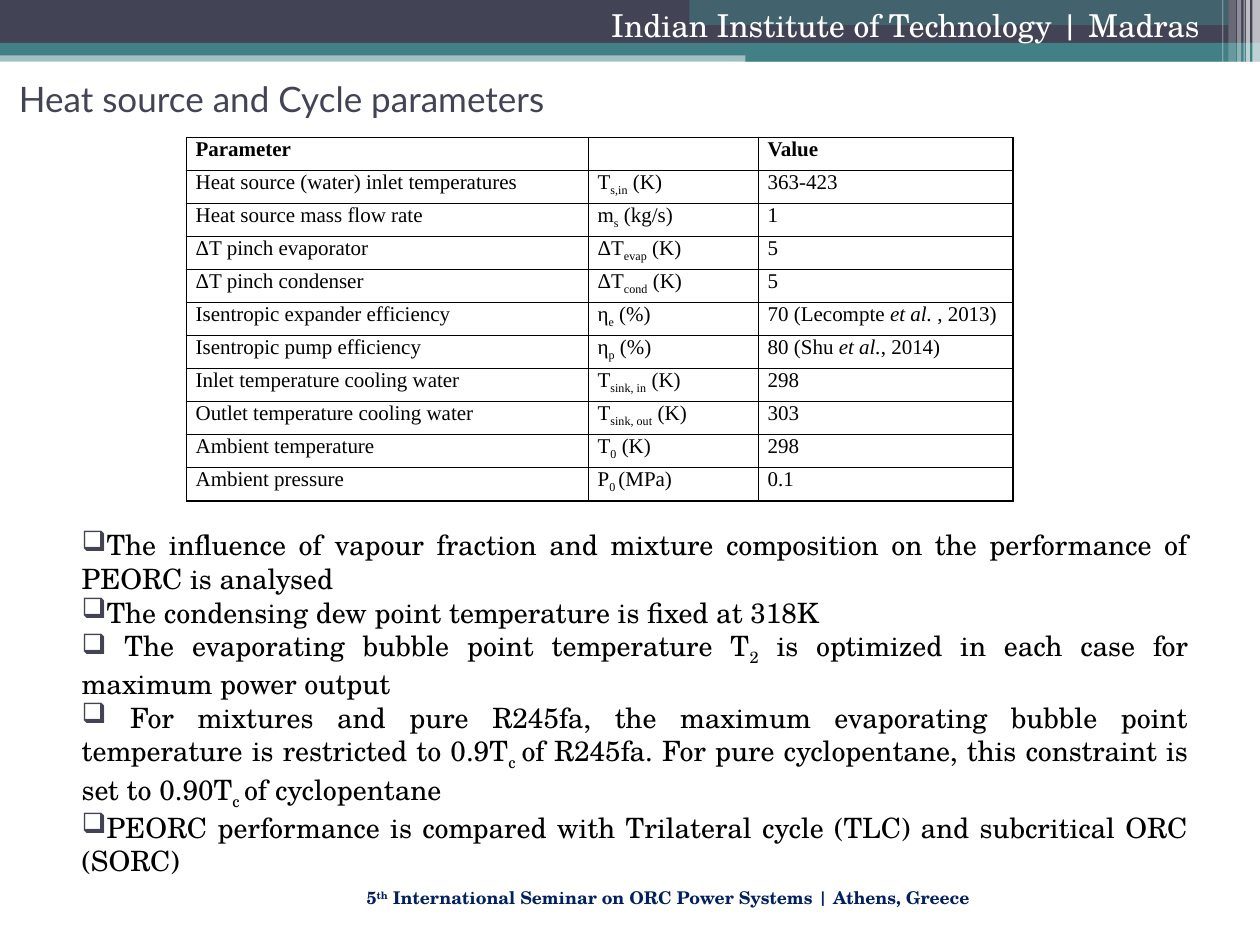
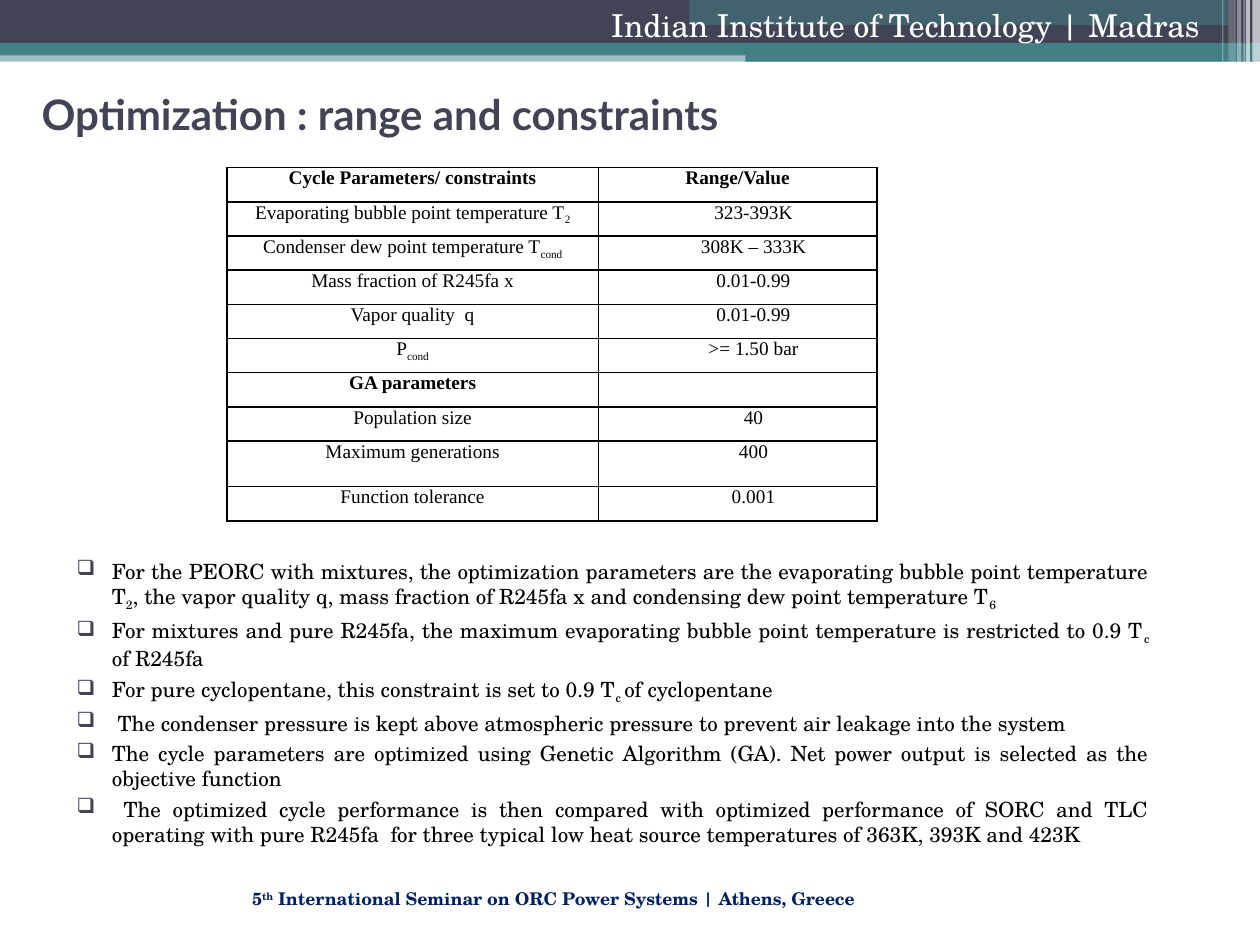
from collections import namedtuple

from lxml import etree
from pptx import Presentation
from pptx.dml.color import RGBColor
from pptx.enum import shapes, text
from pptx.oxml.ns import qn
from pptx.util import Pt

Theme = namedtuple("Theme", "dark teal white navy black serif sans table_font "
                            "header_size footer_size line_width")
theme = Theme(dark="424456", teal="438086", white="FFFFFF", navy="002060", black="000000",
              serif="TeX Gyre Schola", sans="Lato", table_font="Times New Roman",
              header_size=18, footer_size=10, line_width=1)
align = text.PP_ALIGN
anchor = text.MSO_ANCHOR

# Shared bands: left, top, width, height, colour, opacity in percent
bands = [
    (0, 28.8, 720, 6.5, theme.teal, 50),
    (0, 0, 720, 24.5, theme.dark, 100),
    (0, 24.5, 720, 7.2, theme.teal, 100),
    (426, 28.1, 294, 7.2, theme.teal, 100),
    (394, 0, 308, 14.4, theme.teal, 50),
    (715.7, 0, 4.3, 49, theme.white, 65),
    (712, 0, 2.2, 49, theme.white, 65),
    (710.6, 0, 0.7, 49, theme.white, 60),
    (707, 0, 2.2, 49, theme.white, 40),
    (702, 0, 4.3, 46, theme.white, 20),
    (698.4, 0, 0.7, 46, theme.white, 30),
]

# Text marks: ~-subscript~  ~+superscript~  ~/italic~  ~*bold~
header = "Indian Institute of Technology | Madras"
footer = "5~+th~ International Seminar on ORC Power Systems | Athens, Greece"

slides = [
    dict(
        title="Heat source and Cycle parameters", title_size=20, title_bold=False,
        title_place=(3.6, 28.8, 621.4, 55.4), footer_place=(127.4, 503.3, 433.4, 36),
        table_place=(106.6, 78.5), columns=(229.7, 97.2, 145.4),
        heights=[18.9] * 11, table_size=12, cell_margin=5.2,
        cell_align=align.JUSTIFY, value_indent=0,
        rows=[
            ("~*Parameter~", "", "~*Value~"),
            ("Heat source (water) inlet temperatures", "T~-s,in~ (K)", "363-423"),
            ("Heat source mass flow rate", "m~-s~ (kg/s)", "1"),
            ("ΔT pinch evaporator", "ΔT~-evap~ (K)", "5"),
            ("ΔT pinch condenser", "ΔT~-cond~ (K)", "5"),
            ("Isentropic expander efficiency", "η~-e~ (%)", "70 (Lecompte ~/et al.~ , 2013)"),
            ("Isentropic pump efficiency", "η~-p~ (%)", "80 (Shu ~/et al.~, 2014)"),
            ("Inlet temperature cooling water", "T~-sink, in~ (K)", "298"),
            ("Outlet temperature cooling water", "T~-sink, out~ (K)", "303"),
            ("Ambient temperature", "T~-0~ (K)", "298"),
            ("Ambient pressure", "P~-0 ~(MPa)", "0.1"),
        ],
        notes_place=(39.6, 298.1, 646.6, 200.9), notes_size=16,
        note_left=0, note_hang=0, note_gap=0,
        points=[
            "The influence of vapour fraction and mixture composition on the performance of "
            "PEORC is analysed",
            "The condensing dew point temperature is fixed at 318K",
            " The evaporating bubble point temperature T~-2~ is optimized in each case for "
            "maximum power output",
            " For mixtures and pure R245fa, the maximum evaporating bubble point temperature "
            "is restricted to 0.9T~-c ~of R245fa. For pure cyclopentane, this constraint is "
            "set to 0.90T~-c ~of cyclopentane",
            "PEORC performance is compared with Trilateral cycle (TLC) and subcritical ORC (SORC)",
        ],
    ),
    dict(
        title="Optimization : range and constraints", title_size=24, title_bold=True,
        title_place=(16.6, 39.6, 608.4, 50.4), footer_place=(61.9, 504, 433.4, 36),
        table_place=(129.6, 95.8), columns=(212.4, 159.1),
        heights=[19.55] * 8 + [26, 19.55], table_size=11, cell_margin=3.6,
        cell_align=align.CENTER, value_indent=18,
        rows=[
            ("~*Cycle Parameters/ constraints~", "~*Range/Value~"),
            ("Evaporating bubble point temperature T~-2~", "323-393K"),
            ("Condenser dew point temperature T~-cond~", "308K – 333K"),
            ("Mass fraction of R245fa x", "0.01-0.99"),
            ("Vapor quality  q", "0.01-0.99"),
            ("P~-cond~", ">= 1.50 bar"),
            ("~*GA parameters~", ""),
            ("Population size", "40"),
            ("Maximum generations", "400"),
            ("Function tolerance", "0.001"),
        ],
        notes_place=(28.1, 315.4, 635.8, 185.8), notes_size=12,
        note_left=28.8, note_hang=-20.2, note_gap=3,
        points=[
            "For the PEORC with mixtures, the optimization parameters are the evaporating "
            "bubble point temperature T~-2~, the vapor quality q, mass fraction of R245fa x "
            "and condensing dew point temperature T~-6~",
            "For mixtures and pure R245fa, the maximum evaporating bubble point temperature "
            "is restricted to 0.9 T~-c ~of R245fa",
            "For pure cyclopentane, this constraint is set to 0.9 T~-c ~of cyclopentane",
            " The condenser pressure is kept above atmospheric pressure to prevent air "
            "leakage into the system",
            "The cycle parameters are optimized using Genetic Algorithm (GA). Net power "
            "output is selected as the objective function",
            " The optimized cycle performance is then compared with optimized performance of "
            "SORC and TLC operating with pure R245fa  for three typical low heat source "
            "temperatures of 363K, 393K and 423K",
        ],
    ),
]


def write(paragraph, marked, font, size, color, alignment, bold=False):
    """Fill a paragraph from marked text."""
    paragraph.alignment = alignment
    for index, piece in enumerate(marked.split("~")):
        if not piece:
            continue
        mark, words = (piece[0], piece[1:]) if index % 2 else ("", piece)
        span = paragraph.add_run()
        span.text = words
        span.font.name = font
        span.font.size = Pt(size)
        span.font.color.rgb = RGBColor.from_string(color)
        span.font.bold = bold or mark == "*"
        span.font.italic = mark == "/"
        if mark in ("-", "+"):
            span.font._rPr.set("baseline", "-25000" if mark == "-" else "30000")
    if not marked:
        etree.SubElement(paragraph._p, qn("a:endParaRPr"), sz=str(size * 100))


def add_box(page, place, vertical=anchor.TOP):
    """Add a wrapping text box and return its text frame."""
    frame = page.shapes.add_textbox(*map(Pt, place)).text_frame
    frame.word_wrap = True
    frame.vertical_anchor = vertical
    return frame


deck = Presentation()
deck.slide_width, deck.slide_height = Pt(720), Pt(540)

for content in slides:
    page = deck.slides.add_slide(deck.slide_layouts[5])

    # Bands and stripes
    for *place, color, opacity in bands:
        band = page.shapes.add_shape(shapes.MSO_SHAPE.RECTANGLE, *map(Pt, place))
        band.shadow.inherit = False
        band.line.fill.background()
        band.fill.solid()
        band.fill.fore_color.rgb = RGBColor.from_string(color)
        if opacity < 100:
            tint = band._element.spPr.find(".//" + qn("a:srgbClr"))
            etree.SubElement(tint, qn("a:alpha"), val=str(opacity * 1000))

    # Title
    title = page.shapes.title
    title.left, title.top, title.width, title.height = map(Pt, content["title_place"])
    title.text_frame.vertical_anchor = anchor.MIDDLE
    title.text_frame.auto_size = text.MSO_AUTO_SIZE.NONE
    write(title.text_frame.paragraphs[0], content["title"], theme.sans,
          content["title_size"], theme.dark, align.LEFT, content["title_bold"])

    # Header and footer
    frame = add_box(page, (326.2, 0, 366.5, 28.8), anchor.BOTTOM)
    write(frame.paragraphs[0], header, theme.serif, theme.header_size, theme.white, align.RIGHT)
    frame = add_box(page, content["footer_place"])
    write(frame.paragraphs[0], footer, theme.serif, theme.footer_size, theme.navy,
          align.RIGHT, bold=True)

    # Table
    rows, columns, heights = content["rows"], content["columns"], content["heights"]
    left, top = content["table_place"]
    table = page.shapes.add_table(len(rows), len(columns), Pt(left), Pt(top),
                                  Pt(sum(columns)), Pt(sum(heights))).table
    table.first_row = table.horz_banding = False
    for column, width in zip(table.columns, columns):
        column.width = Pt(width)
    for row, height, values in zip(table.rows, heights, rows):
        row.height = Pt(height)
        for number, (cell, value) in enumerate(zip(row.cells, values)):
            cell.margin_left = cell.margin_right = Pt(content["cell_margin"])
            cell.margin_top = cell.margin_bottom = 0
            paragraph = cell.text_frame.paragraphs[0]
            write(paragraph, value, theme.table_font, content["table_size"],
                  theme.black, content["cell_align"])
            if number and "*" not in value:
                paragraph._p.get_or_add_pPr().set("marL", str(Pt(content["value_indent"])))
            properties = cell._tc.get_or_add_tcPr()
            for side in ("lnL", "lnR", "lnT", "lnB"):
                border = etree.SubElement(properties, qn("a:" + side),
                                          w=str(Pt(theme.line_width)))
                paint = etree.SubElement(border, qn("a:solidFill"))
                etree.SubElement(paint, qn("a:srgbClr"), val=theme.black)
            cell.fill.background()

    # Bulleted points
    frame = add_box(page, content["notes_place"])
    for number, point in enumerate(content["points"]):
        paragraph = frame.add_paragraph() if number else frame.paragraphs[0]
        properties = paragraph._p.get_or_add_pPr()
        properties.set("marL", str(Pt(content["note_left"])))
        properties.set("indent", str(Pt(content["note_hang"])))
        bullet_color = etree.SubElement(properties, qn("a:buClr"))
        etree.SubElement(bullet_color, qn("a:srgbClr"), val=theme.dark)
        etree.SubElement(properties, qn("a:buChar"), char="❑")
        if number:
            paragraph.space_before = Pt(content["note_gap"])
        write(paragraph, point, theme.serif, content["notes_size"], theme.black, align.JUSTIFY)

deck.save("out.pptx")
